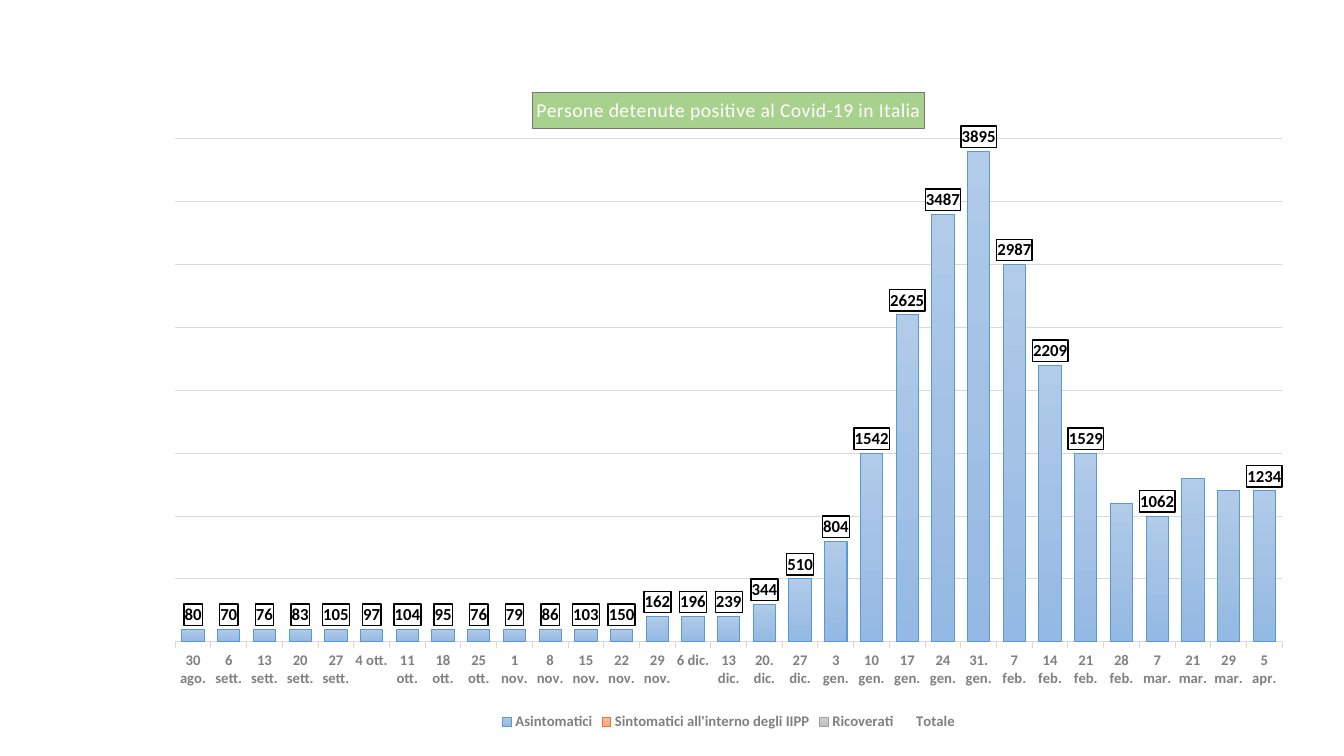
from pptx import Presentation
from pptx.chart.data import CategoryChartData
from pptx.dml.color import RGBColor
from pptx.enum.chart import (XL_CHART_TYPE, XL_LABEL_POSITION,
                             XL_LEGEND_POSITION, XL_TICK_MARK)
from pptx.oxml import parse_xml
from pptx.oxml.ns import nsdecls, qn
from pptx.util import Pt

COLORS = {"white": "FFFFFF", "black": "000000", "grid": "D9D9D9",
          "grey": "808080", "green": "A9D18E", "border": "767676"}
# Gradient stops and outline of each visible series
BARS = [(("B1CBE9", "A3C1E5", "93B9E4"), "5998D0"),
        (("F7BDA5", "F5B196", "F8A582"), "E87A30"),
        (("D2D2D2", "C8C8C8", "C0C0C0"), "A1A1A1")]

# Weekly data; the unlabelled parts are rounded to hundreds
WEEKS = ["30 ago.", "6 sett.", "13 sett.", "20 sett.", "27 sett.", "4 ott.",
         "11 ott.", "18 ott.", "25 ott.", "1 nov.", "8 nov.", "15 nov.",
         "22 nov.", "29 nov.", "6 dic.", "13 dic.", "20. dic.", "27 dic.",
         "3 gen.", "10 gen.", "17 gen.", "24 gen.", "31. gen.", "7 feb.",
         "14 feb.", "21 feb.", "28 feb.", "7 mar.", "21 mar.", "29 mar.",
         "5 apr."]
TOTAL = [80, 70, 76, 83, 105, 97, 104, 95, 76, 79, 86, 103, 150, 162, 196,
         239, 344, 510, 804, 1542, 2625, 3487, 3895, 2987, 2209, 1529, 1160,
         1062, 1341, 1208, 1234]
NO_SYMPTOMS = [100] * 13 + [200] * 3 + [
    300, 500, 800, 1500, 2600, 3400, 3900, 3000, 2200, 1500, 1100, 1000,
    1300, 1200, 1200]
SYMPTOMS = HOSPITAL = [0] * len(WEEKS)
UNLABELLED = [26, 28, 29]


class Deck:
    def __init__(self, prs, font="Calibri"):
        self.font = font
        self.slide = prs.slides.add_slide(prs.slide_layouts[6])

    def color(self, name):
        return RGBColor.from_string(COLORS[name])

    def text(self, font, size, color, bold=False):
        font.name, font.size, font.bold = self.font, Pt(size), bold
        font.color.rgb = self.color(color)

    def line(self, line, color):
        line.color.rgb = self.color(color)
        line.width = Pt(0.75)

    def layout(self, parent, index, **edges):
        """Give a chart part a manual position, as shares of the chart."""
        for old in parent.findall(qn("c:layout")):
            parent.remove(old)
        inner = '<c:layoutTarget val="inner"/>' if "w" in edges else ""
        modes = '<c:xMode val="edge"/><c:yMode val="edge"/>'
        sizes = "".join(f'<c:{k} val="{v}"/>' for k, v in edges.items())
        parent.insert(index, parse_xml(
            f'<c:layout {nsdecls("c")}><c:manualLayout>{inner}{modes}{sizes}'
            '</c:manualLayout></c:layout>'))

    def chart(self, x, y, w, h, data):
        gf = self.slide.shapes.add_chart(
            XL_CHART_TYPE.COLUMN_STACKED, Pt(x), Pt(y), Pt(w), Pt(h), data)
        chart = gf.chart
        self.text(chart.font, 10, "black")
        plot = chart.plots[0]
        plot.gap_width, plot.overlap, plot.vary_by_categories = 60, 100, False
        return chart

    def title(self, chart, text, x, y):
        title = chart.chart_title
        r = title.text_frame.paragraphs[0].add_run()
        r.text = text
        self.text(r.font, 14, "white")
        r.font._element.set("spc", "20")
        title.include_in_layout = False
        title.format.fill.solid()
        title.format.fill.fore_color.rgb = self.color("green")
        self.line(title.format.line, "border")
        self.layout(title._element, 1, x=x, y=y)

    def axes(self, chart, top, step):
        cat, val = chart.category_axis, chart.value_axis
        self.text(cat.tick_labels.font, 10.5, "grey", True)
        self.line(cat.format.line, "grid")
        cat.major_tick_mark = XL_TICK_MARK.OUTSIDE
        val.visible = False
        val.minimum_scale, val.maximum_scale, val.major_unit = 0, top, step
        val.has_major_gridlines = True
        self.line(val.major_gridlines.format.line, "grid")

    def legend(self, chart):
        chart.has_legend = True
        chart.legend.position = XL_LEGEND_POSITION.BOTTOM
        chart.legend.include_in_layout = False
        self.text(chart.legend.font, 10.5, "grey", True)

    def gradient(self, series, stops, outline):
        series.format.line.color.rgb = RGBColor.from_string(outline)
        series.format.line.width = Pt(0.75)
        gs = "".join(f'<a:gs pos="{i * 50000}"><a:srgbClr val="{c}"/></a:gs>'
                     for i, c in enumerate(stops))
        series._element.find(qn("c:spPr")).insert(0, parse_xml(
            f'<a:gradFill {nsdecls("a")}><a:gsLst>{gs}</a:gsLst>'
            '<a:lin ang="5400000" scaled="0"/></a:gradFill>'))

    def labels(self, series, skip):
        series.format.fill.background()
        series.format.line.fill.background()
        dl = series.data_labels
        dl.show_value, dl.position = True, XL_LABEL_POSITION.INSIDE_BASE
        self.text(dl.font, 12, "black", True)
        # White boxes with a black outline
        dl._element.find(qn("c:txPr")).addprevious(parse_xml(
            f'<c:spPr {nsdecls("c", "a")}><a:solidFill><a:srgbClr '
            f'val="{COLORS["white"]}"/></a:solidFill><a:ln w="{Pt(1)}">'
            f'<a:solidFill><a:srgbClr val="{COLORS["black"]}"/></a:solidFill>'
            '</a:ln></c:spPr>'))
        for i, point in enumerate(skip):
            dl._element.insert(i, parse_xml(
                f'<c:dLbl {nsdecls("c")}><c:idx val="{point}"/>'
                '<c:delete val="1"/></c:dLbl>'))


def main():
    prs = Presentation()
    prs.slide_width, prs.slide_height = Pt(960), Pt(540)
    deck = Deck(prs)

    # Stacked parts, with the total as an invisible bar carrying the labels
    data = CategoryChartData()
    data.categories = WEEKS
    for name, values in [("Asintomatici", NO_SYMPTOMS),
                         ("Sintomatici all'interno degli IIPP", SYMPTOMS),
                         ("Ricoverati", HOSPITAL), ("Totale", TOTAL)]:
        data.add_series(name, values)
    chart = deck.chart(108.7, 51.8, 823.7, 473, data)

    # Title, axes and legend
    deck.title(chart, "Persone detenute positive al Covid-19 in Italia",
               0.33, 0.03)
    deck.axes(chart, 4000, 500)
    deck.legend(chart)
    plot_area = chart._chartSpace.find(qn("c:chart")).find(qn("c:plotArea"))
    deck.layout(plot_area, 0, x=0.02, y=0.1, w=0.96, h=0.76)

    # Series
    *parts, total = chart.plots[0].series
    for series, (stops, outline) in zip(parts, BARS):
        deck.gradient(series, stops, outline)
    deck.labels(total, UNLABELLED)

    prs.save("out.pptx")


if __name__ == "__main__":
    main()
